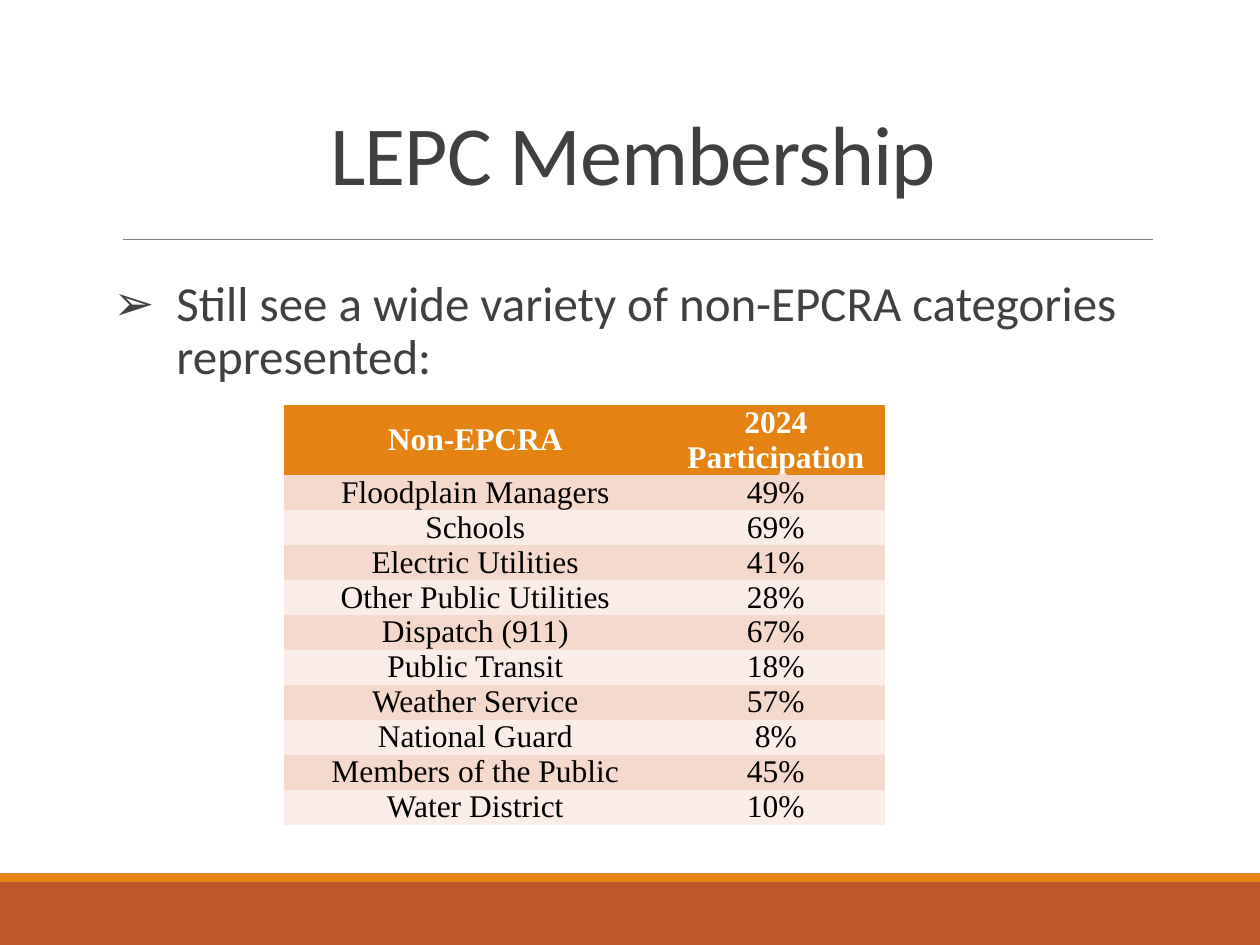
from dataclasses import dataclass

from lxml.etree import SubElement
from pptx import Presentation
from pptx.dml.color import RGBColor
from pptx.enum.shapes import MSO_CONNECTOR, MSO_SHAPE
from pptx.enum.text import MSO_ANCHOR, MSO_AUTO_SIZE, PP_ALIGN
from pptx.oxml.ns import qn
from pptx.util import Pt

TITLE = "LEPC Membership"
BULLET = "Still see a wide variety of non-EPCRA categories represented:"
HEADER = ("Non-EPCRA", "2024 Participation")
PARTICIPATION = [
    ("Floodplain Managers", "49%"),
    ("Schools", "69%"),
    ("Electric Utilities", "41%"),
    ("Other Public Utilities", "28%"),
    ("Dispatch (911)", "67%"),
    ("Public Transit", "18%"),
    ("Weather Service", "57%"),
    ("National Guard", "8%"),
    ("Members of the Public", "45%"),
    ("Water District", "10%"),
]


@dataclass(frozen=True)
class Theme:
    heading_font: str = "Calibri"
    table_font: str = "Times New Roman"
    title_size: int = 48
    body_size: int = 28
    table_size: int = 18
    text: str = "404040"
    rule: str = "808080"
    orange: str = "E48312"
    rust: str = "BD582C"
    white: str = "FFFFFF"
    black: str = "000000"
    bands: tuple = ("F5D9CC", "FAEDE7")


THEME = Theme()
WIDTH, HEIGHT = 720, 540
FOOTER_TOP, STRIPE_HEIGHT = 504, 5
LEFT, CONTENT_WIDTH = 64.8, 594
RULE_LEFT, RULE_RIGHT, RULE_TOP = 70.5, 659, 136.8
TABLE_LEFT, TABLE_TOP = 162.5, 231.4
COLUMN_WIDTHS = (218.2, 125.3)
ROW_HEIGHT = 20
NO_GRID_STYLE = "{2D5ABB26-0587-4C30-8999-92F81FD0307C}"


def place(shape, left, top, width, height):
    shape.left, shape.top = Pt(left), Pt(top)
    shape.width, shape.height = Pt(width), Pt(height)


def style(paragraph, font, size, color, bold=False):
    for span in paragraph.runs:
        span.font.name = font
        span.font.size = Pt(size)
        span.font.bold = bold
        span.font.color.rgb = RGBColor.from_string(color)


def add_band(page, top, height, color):
    band = page.shapes.add_shape(MSO_SHAPE.RECTANGLE, 0, Pt(top), Pt(WIDTH), Pt(height))
    band.shadow.inherit = False
    band.fill.solid()
    band.fill.fore_color.rgb = RGBColor.from_string(color)
    band.line.fill.background()


def add_rule(page):
    rule = page.shapes.add_connector(
        MSO_CONNECTOR.STRAIGHT, Pt(RULE_LEFT), Pt(RULE_TOP), Pt(RULE_RIGHT), Pt(RULE_TOP)
    )
    rule.line.width = Pt(0.5)
    rule.line.color.rgb = RGBColor.from_string(THEME.rule)
    SubElement(rule._element.spPr, qn("a:effectLst"))


def fill_title(box):
    place(box, LEFT, 22.3, CONTENT_WIDTH, 97.2)
    frame = box.text_frame
    frame.text = TITLE
    frame.auto_size = MSO_AUTO_SIZE.NONE
    frame.vertical_anchor = MSO_ANCHOR.BOTTOM
    paragraph = frame.paragraphs[0]
    paragraph.alignment = PP_ALIGN.CENTER
    paragraph.line_spacing = 0.85
    style(paragraph, THEME.heading_font, THEME.title_size, THEME.text)
    paragraph.runs[0].font._element.set("spc", "-50")


def fill_body(box):
    place(box, LEFT, 156.2, CONTENT_WIDTH, 329.8)
    frame = box.text_frame
    frame.text = BULLET
    frame.auto_size = MSO_AUTO_SIZE.NONE
    frame.vertical_anchor = MSO_ANCHOR.TOP
    frame.margin_left = frame.margin_right = 0
    frame.margin_top = frame.margin_bottom = Pt(3.6)
    paragraph = frame.paragraphs[0]
    paragraph.alignment = PP_ALIGN.LEFT
    paragraph.line_spacing = 0.9
    paragraph.space_before, paragraph.space_after = Pt(12), Pt(2)
    style(paragraph, THEME.heading_font, THEME.body_size, THEME.text)
    properties = paragraph._p.get_or_add_pPr()
    properties.set("marL", str(Pt(36)))
    properties.set("indent", str(-Pt(36)))
    SubElement(properties, qn("a:buChar")).set("char", "➢")


def fill_cell(cell, text, fill, color, bold):
    cell.fill.solid()
    cell.fill.fore_color.rgb = RGBColor.from_string(fill)
    cell.vertical_anchor = MSO_ANCHOR.MIDDLE
    cell.margin_left = cell.margin_right = cell.margin_top = cell.margin_bottom = 0
    cell.text_frame.text = text
    paragraph = cell.text_frame.paragraphs[0]
    paragraph.alignment = PP_ALIGN.CENTER
    style(paragraph, THEME.table_font, THEME.table_size, color, bold)


def add_participation_table(page):
    rows = [HEADER, *PARTICIPATION]
    heights = [2 * ROW_HEIGHT] + [ROW_HEIGHT] * len(PARTICIPATION)
    table = page.shapes.add_table(
        len(rows), len(HEADER), Pt(TABLE_LEFT), Pt(TABLE_TOP),
        Pt(sum(COLUMN_WIDTHS)), Pt(sum(heights)),
    ).table
    table._tbl.tblPr.find(qn("a:tableStyleId")).text = NO_GRID_STYLE
    for column, width in zip(table.columns, COLUMN_WIDTHS):
        column.width = Pt(width)
    for index, (row, values) in enumerate(zip(table.rows, rows)):
        row.height = Pt(heights[index])
        is_header = index == 0
        fill = THEME.orange if is_header else THEME.bands[(index - 1) % 2]
        color = THEME.white if is_header else THEME.black
        for cell, text in zip(row.cells, values):
            fill_cell(cell, text, fill, color, is_header)


def main():
    deck = Presentation()
    deck.slide_width, deck.slide_height = Pt(WIDTH), Pt(HEIGHT)
    page = deck.slides.add_slide(deck.slide_layouts[1])
    page.background.fill.solid()
    page.background.fill.fore_color.rgb = RGBColor.from_string(THEME.white)
    add_band(page, FOOTER_TOP, HEIGHT - FOOTER_TOP, THEME.rust)
    add_band(page, FOOTER_TOP - STRIPE_HEIGHT, STRIPE_HEIGHT, THEME.orange)
    add_rule(page)
    fill_title(page.shapes.title)
    fill_body(page.placeholders[1])
    add_participation_table(page)
    deck.save("out.pptx")


if __name__ == "__main__":
    main()
